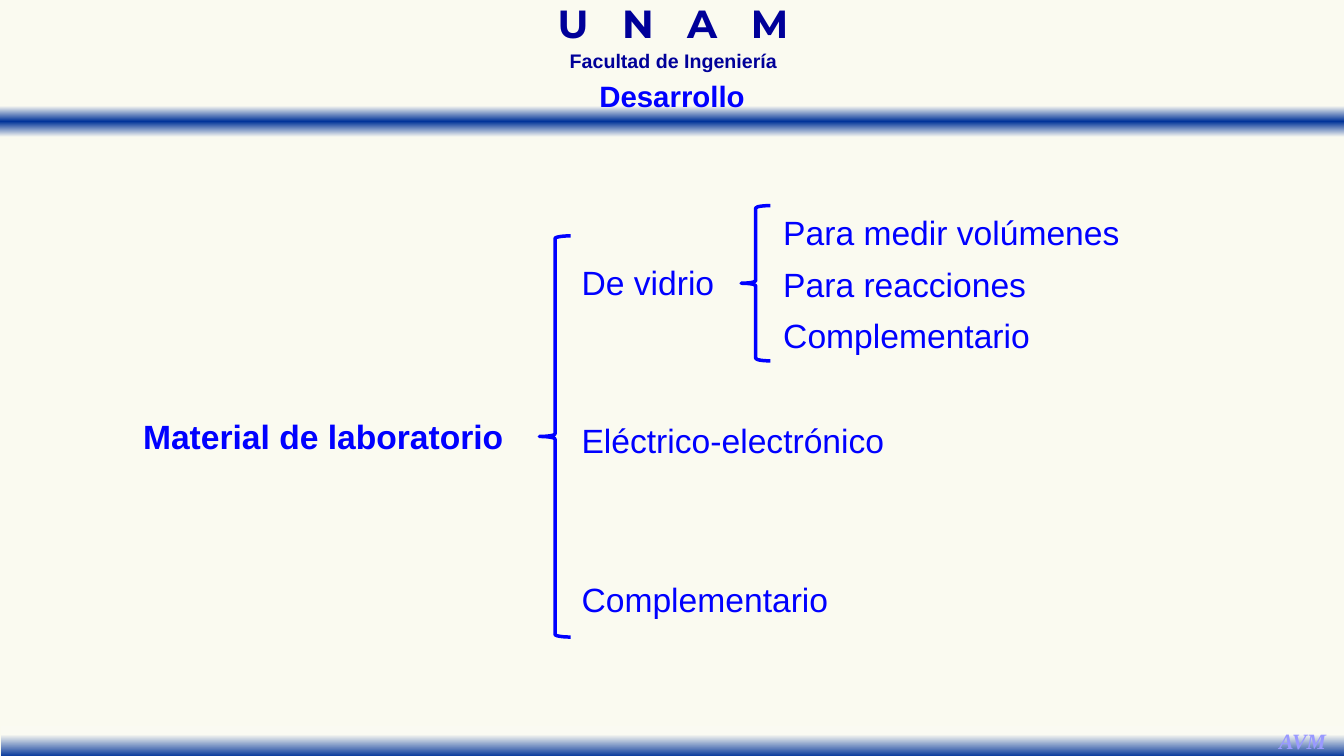
from lxml import etree
from pptx import Presentation
from pptx.dml.color import RGBColor
from pptx.enum.shapes import MSO_SHAPE
from pptx.enum.text import MSO_ANCHOR, MSO_AUTO_SIZE, PP_ALIGN
from pptx.oxml.ns import qn
from pptx.util import Inches, Pt

RECTANGLE, LEFT_BRACE = MSO_SHAPE.RECTANGLE, MSO_SHAPE.LEFT_BRACE
LEFT, CENTER = PP_ALIGN.LEFT, PP_ALIGN.CENTER
TOP, NO_AUTOFIT = MSO_ANCHOR.TOP, MSO_AUTO_SIZE.NONE

WIDTH, HEIGHT = 13.33, 7.5
BAND_HEIGHT, LABEL_HEIGHT = 0.31, 0.5
CREAM, IVORY, BAND_BLUE = "FAFAF0", "FAFAF2", "003399"
NAVY, BLUE, LILAC = "000099", "0000FF", "9999FF"


def color(hex_string):
    return RGBColor.from_string(hex_string)


def write(shape, text, size, hex_string, font="Arial", bold=False, italic=False,
          align=LEFT, line_spacing=None, wrap=False):
    frame = shape.text_frame
    frame.text = text
    frame.word_wrap = wrap
    frame.auto_size = NO_AUTOFIT
    frame.vertical_anchor = TOP
    paragraph = frame.paragraphs[0]
    paragraph.alignment = align
    paragraph.line_spacing = line_spacing
    run_font = paragraph.runs[0].font
    run_font.name, run_font.size = font, Pt(size)
    run_font.bold, run_font.italic = bold, italic
    run_font.color.rgb = color(hex_string)
    return run_font


def add_text(slide, box, text, size, hex_string, **style):
    shape = slide.shapes.add_textbox(*map(Inches, box))
    return write(shape, text, size, hex_string, **style)


def add_band(slide, box, stops):
    """Draw a bar with a vertical gradient; stops are (percent, colour) pairs."""
    band = slide.shapes.add_shape(RECTANGLE, *map(Inches, box))
    band.shadow.inherit = False
    band.line.fill.background()
    band.fill.gradient()
    band.fill.gradient_angle = 270
    stop_list = next(band._element.iter(qn("a:gsLst")))
    for stop in list(stop_list):
        stop_list.remove(stop)
    for percent, hex_string in stops:
        stop = etree.SubElement(stop_list, qn("a:gs"), pos=str(percent * 1000))
        etree.SubElement(stop, qn("a:srgbClr"), val=hex_string)


def add_brace(slide, box):
    brace = slide.shapes.add_shape(LEFT_BRACE, *map(Inches, box))
    brace.shadow.inherit = False
    brace.fill.background()
    brace.line.color.rgb = color(BLUE)
    brace.line.width = Pt(2.5)


def add_header(slide, box):
    left, top, width, height = box
    add_band(slide, (left, top + height - BAND_HEIGHT, width, BAND_HEIGHT),
             [(0, IVORY), (50, BAND_BLUE), (100, IVORY)])
    center = left + width / 2
    heading = {"bold": True, "align": CENTER, "line_spacing": 0.7, "wrap": True}
    university = add_text(slide, (center - 1.94, top + 0.07, 3.9, 0.45), "U N A M",
                          28, NAVY, font="Montserrat", **heading)
    university._element.set("spc", "805")
    add_text(slide, (center - 1.77, top + 0.5, 3.57, 0.27),
             "Facultad de Ingeniería", 14, NAVY, **heading)
    title = slide.shapes.title
    title.left, title.top = Inches(center - 0.83), Inches(top + 0.72)
    title.width, title.height = Inches(1.66), Inches(0.45)
    write(title, "Desarrollo", 21, BLUE, bold=True, align=CENTER)
    # The title overlaps the band, so it goes in front of it.
    slide.shapes._spTree.append(title._element)


def add_footer(slide, box):
    left, top, width, height = box
    add_band(slide, box, [(28, IVORY), (100, BAND_BLUE)])
    add_text(slide, (left + width - 0.76, top - 0.03, 0.68, 0.37), "AVM", 15.6,
             LILAC, font="Times New Roman", bold=True, italic=True, align=CENTER)


def add_labels(slide, box, labels):
    """Stack labels so that the first and last touch the ends of the box."""
    left, top, width, height = box
    pitch = (height - LABEL_HEIGHT) / (len(labels) - 1)
    for row, label in enumerate(labels):
        add_text(slide, (left, top + row * pitch, width, LABEL_HEIGHT),
                 label, 24, BLUE)


def add_material_tree(slide, box):
    left, top, width, height = box
    add_text(slide, (left, top + 2.04, 3.81, LABEL_HEIGHT),
             "Material de laboratorio", 24, BLUE, bold=True)
    add_brace(slide, (left + 4.03, top + 0.3, 0.31, height - 0.3))
    add_labels(slide, (left + 4.35, top + 0.51, 3.24, 3.64),
               ["De vidrio", "Eléctrico-electrónico", "Complementario"])
    add_brace(slide, (left + 6.03, top, 0.29, 1.54))
    add_labels(slide, (left + 6.35, top + 0.01, width - 6.35, 1.53),
               ["Para medir volúmenes", "Para reacciones", "Complementario"])


def main():
    presentation = Presentation()
    presentation.slide_width = Inches(WIDTH)
    presentation.slide_height = Inches(HEIGHT)
    slide = presentation.slides.add_slide(presentation.slide_layouts[5])
    slide.background.fill.solid()
    slide.background.fill.fore_color.rgb = color(CREAM)
    add_header(slide, (0, 0, WIDTH, 1.36))
    add_footer(slide, (0.01, 7.2, WIDTH, BAND_HEIGHT))
    add_material_tree(slide, (1.32, 2.04, 9.92, 4.28))
    presentation.save("out.pptx")


if __name__ == "__main__":
    main()
